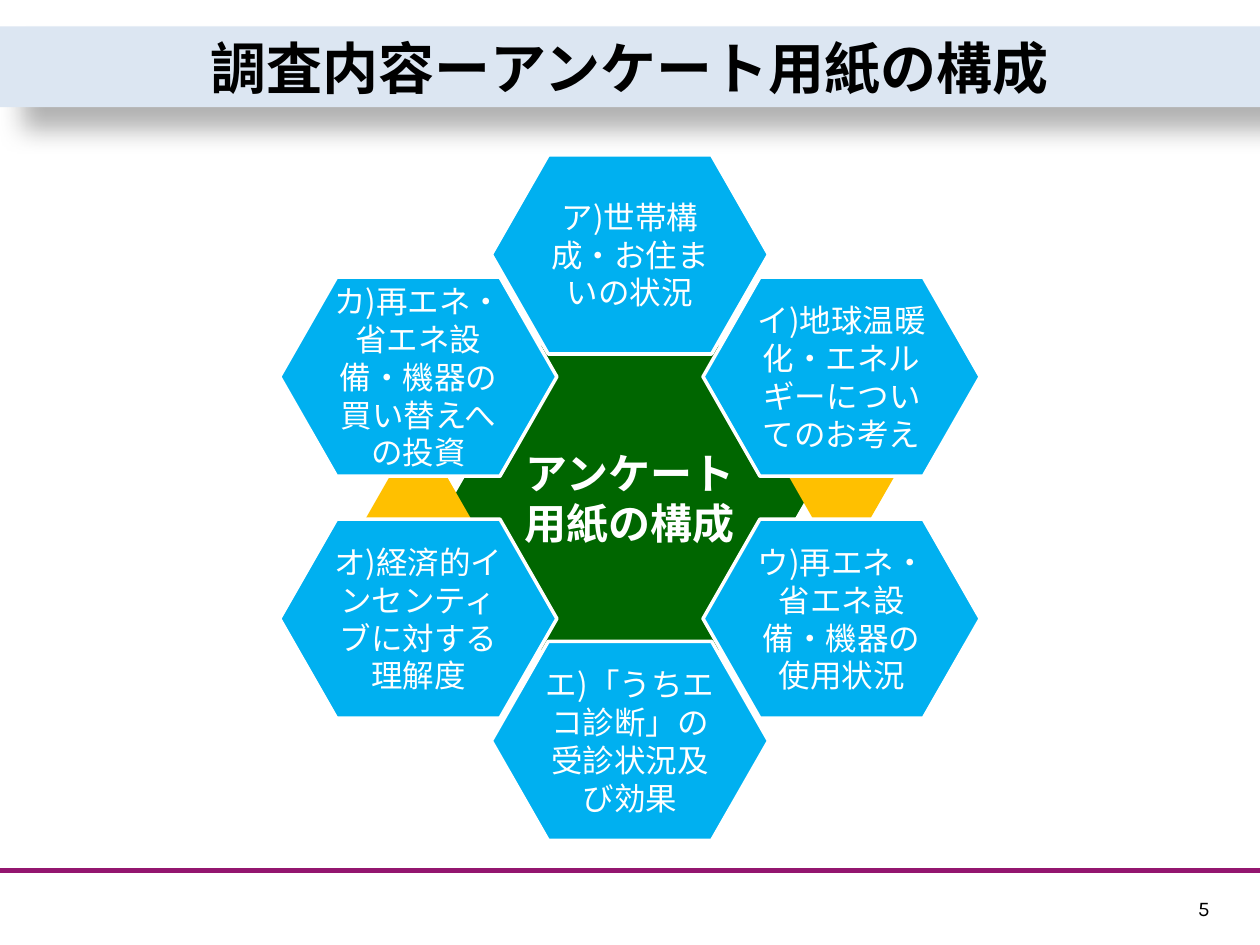
import pptx
import pptx.dml.color
import pptx.enum.shapes
import pptx.enum.text
import pptx.oxml
import pptx.oxml.ns
import pptx.util
from pptx.util import Inches

COLORS = {
    "band": "DCE6F2",
    "core": "006600",
    "cell": "00B0F0",
    "bridge": "FFC000",
    "rule": "93166F",
    "white": "FFFFFF",
    "black": "000000",
}
JAPANESE = "Noto Sans CJK JP"
LATIN = "Karla"
DRAWING = pptx.oxml.ns.nsdecls("a")
ALIGN = pptx.enum.text.PP_ALIGN
ANCHOR = pptx.enum.text.MSO_ANCHOR
SHAPE = pptx.enum.shapes.MSO_SHAPE

CELL_SIZE = (2.2, 1.58)
CELL_TEXT_SIZE = (1.53, 1.1)
CORE_SIZE = (2.84, 2.44)
CORE_TEXT_SIZE = (1.9, 1.63)
BRIDGE_SIZE = (0.84, 0.72)
COLUMN_STEP = 1.68
INNER_STEP = 0.96
OUTER_STEP = 1.93

TOPICS = [
    ("ア)世帯構成・お住まいの状況", 0, -OUTER_STEP),
    ("イ)地球温暖化・エネルギーについてのお考え", COLUMN_STEP, -INNER_STEP),
    ("ウ)再エネ・省エネ設備・機器の使用状況", COLUMN_STEP, INNER_STEP),
    ("エ)「うちエコ診断」の受診状況及び効果", 0, OUTER_STEP),
    ("オ)経済的インセンティブに対する理解度", -COLUMN_STEP, INNER_STEP),
    ("カ)再エネ・省エネ設備・機器の買い替えへの投資", -COLUMN_STEP, -INNER_STEP),
]


def rgb(name):
    return pptx.dml.color.RGBColor.from_string(COLORS[name])


def set_attributes(target, values):
    for name, value in values.items():
        setattr(target, name, value)


def centred_box(center, size):
    return [Inches(middle - length / 2) for middle, length in zip(center, size)] + [
        Inches(length) for length in size
    ]


def write_text(frame, text, size, color, bold=False):
    paragraph = frame.paragraphs[0]
    paragraph.alignment = ALIGN.CENTER
    span = paragraph.add_run()
    span.text = text
    set_attributes(span.font, {"size": pptx.util.Pt(size), "bold": bold, "name": JAPANESE})
    span.font.color.rgb = rgb(color)
    span.font._element.append(
        pptx.oxml.parse_xml(f'<a:ea {DRAWING} typeface="{JAPANESE}"/>')
    )


def add_title(page, box):
    title = page.shapes.title
    set_attributes(title, dict(zip(("left", "top", "width", "height"), box)))
    title.fill.solid()
    title.fill.fore_color.rgb = rgb("band")
    set_attributes(title.text_frame, {
        "word_wrap": True,
        "auto_size": pptx.enum.text.MSO_AUTO_SIZE.NONE,
        "vertical_anchor": ANCHOR.MIDDLE,
    })
    write_text(title.text_frame, "調査内容ーアンケート用紙の構成", 32, "black", True)
    title._element.spPr.append(pptx.oxml.parse_xml(
        f'<a:effectLst {DRAWING}><a:outerShdw blurRad="{pptx.util.Pt(15)}" '
        f'dist="{pptx.util.Pt(18)}" dir="2700000" algn="tl" rotWithShape="0">'
        f'<a:srgbClr val="{COLORS["black"]}"><a:alpha val="30000"/></a:srgbClr>'
        '</a:outerShdw></a:effectLst>'
    ))


def add_hexagon(page, center, size, color, outlined=True):
    hexagon = page.shapes.add_shape(SHAPE.HEXAGON, *centred_box(center, size))
    hexagon.adjustments[0] = 0.286
    hexagon.shadow.inherit = False
    hexagon.fill.solid()
    hexagon.fill.fore_color.rgb = rgb(color)
    if outlined:
        hexagon.line.color.rgb = rgb("white")
        hexagon.line.width = pptx.util.Pt(2)
    else:
        hexagon.line.fill.background()


def add_label(page, center, size, text, points, bold=False):
    frame = page.shapes.add_textbox(*centred_box(center, size)).text_frame
    set_attributes(frame, {"word_wrap": True, "vertical_anchor": ANCHOR.MIDDLE})
    sides = ("margin_left", "margin_top", "margin_right", "margin_bottom")
    set_attributes(frame, dict.fromkeys(sides, Inches(0.03)))
    write_text(frame, text, points, "white", bold)


def add_honeycomb(page, center):
    x, y = center
    add_hexagon(page, center, CORE_SIZE, "core")
    add_label(page, center, CORE_TEXT_SIZE, "アンケート用紙の構成", 24, True)
    for side in (1, -1):
        add_hexagon(page, (x + side * COLUMN_STEP, y - side * 0.17),
                    BRIDGE_SIZE, "bridge", False)
    for text, across, down in TOPICS:
        cell_center = (x + across, y + down)
        add_hexagon(page, cell_center, CELL_SIZE, "cell")
        add_label(page, cell_center, CELL_TEXT_SIZE, text, 18)


def add_footer(page, top, number_box):
    rule = page.shapes.add_connector(
        pptx.enum.shapes.MSO_CONNECTOR.STRAIGHT, 0, top, Inches(10), top
    )
    rule.line.color.rgb = rgb("rule")
    rule.line.width = pptx.util.Pt(3)
    rule._element.spPr.append(pptx.oxml.parse_xml(f"<a:effectLst {DRAWING}/>"))
    frame = page.shapes.add_textbox(*number_box).text_frame
    frame.word_wrap = True
    frame.paragraphs[0]._p.append(pptx.oxml.parse_xml(
        f'<a:fld {DRAWING} id="{{B6F15528-21DE-4FAA-801E-634DDDAF4B2B}}" type="slidenum">'
        f'<a:rPr lang="ja-JP" sz="1200"><a:solidFill><a:srgbClr val="{COLORS["black"]}"/>'
        f'</a:solidFill><a:latin typeface="{LATIN}"/></a:rPr><a:t>5</a:t></a:fld>'
    ))


def main():
    deck = pptx.Presentation()
    set_attributes(deck, {"slide_width": Inches(10), "slide_height": Inches(7.5)})
    deck.element.set("firstSlideNum", "5")
    page = deck.slides.add_slide(deck.slide_layouts[5])
    add_footer(page, Inches(6.91),
               (Inches(9.41), Inches(7.06), Inches(0.47), Inches(0.3)))
    add_title(page, (0, Inches(0.21), Inches(10), Inches(0.64)))
    add_honeycomb(page, (5, 3.95))
    deck.save("out.pptx")


if __name__ == "__main__":
    main()
